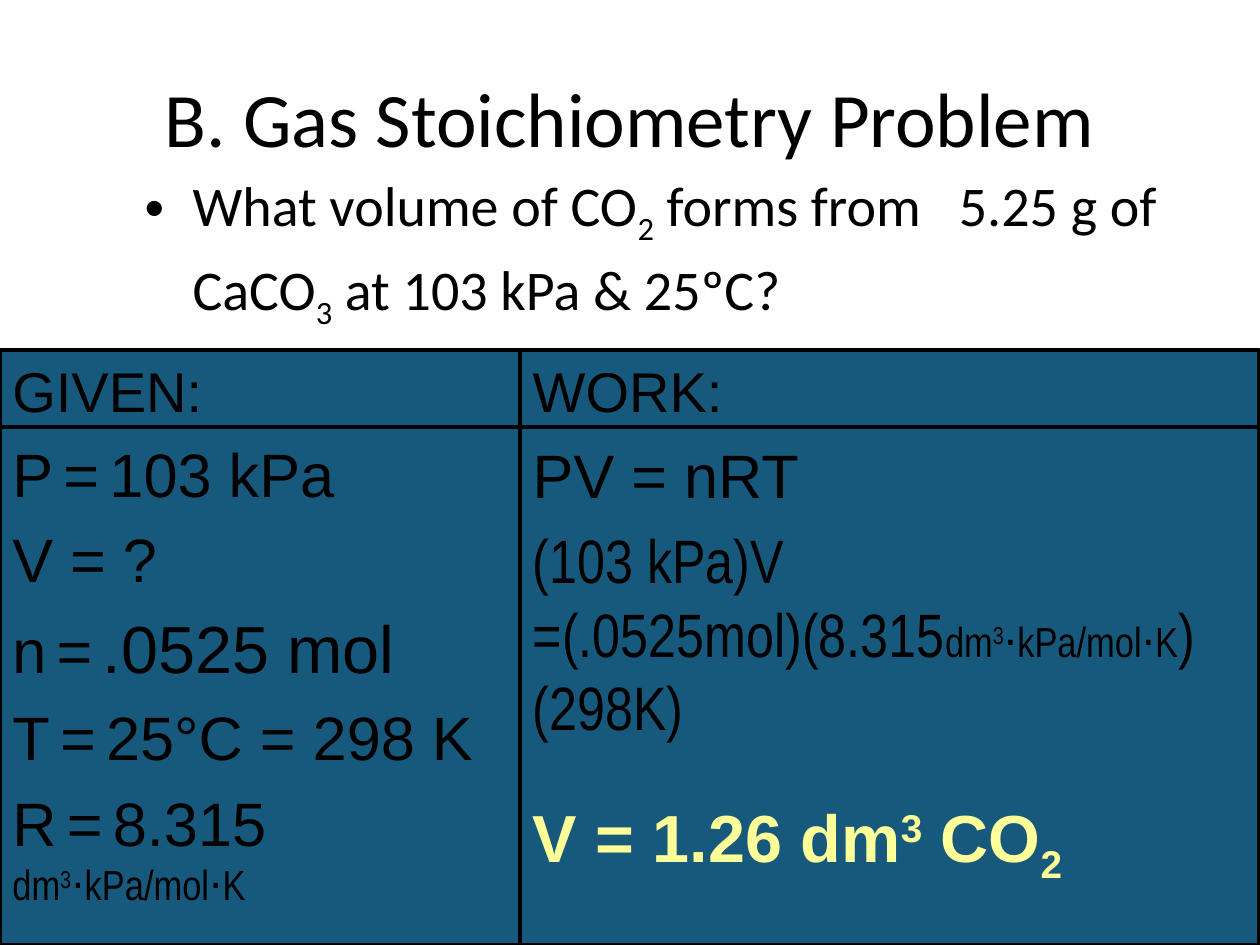
from lxml.etree import SubElement
from pptx import Presentation
from pptx.dml.color import RGBColor
from pptx.enum.shapes import MSO_CONNECTOR, MSO_SHAPE
from pptx.enum.text import MSO_ANCHOR, PP_ALIGN
from pptx.oxml.ns import qn
from pptx.util import Inches, Pt

W, H = 10, 7.5
TOP, SPLIT, HEADER_END = 2.78, 4.13, 3.39
BLACK, BLUE, YELLOW = "000000", "17597D", "FFFF99"
CALIBRI = dict(font="Calibri", size=32)
ARIAL = dict(font="Arial", size=35)
NARROW = dict(font="Arial Narrow", size=35)
UNIT = dict(font="Arial Narrow", size=24)
ANSWER = dict(font="Arial", size=38, bold=True, color=YELLOW)
SUB, SUP = dict(base=-25), dict(base=30)


def unit(lead=""):
    return [(lead + "dm", UNIT), ("3", UNIT | SUP), ("⋅kPa/mol⋅K", UNIT)]


def given(name, value, size=35):
    gap = (" ", ARIAL | dict(size=21))
    return [(name, ARIAL), gap, ("=", ARIAL), gap, (value, ARIAL | dict(size=size))]


# Each paragraph: space before in points, then its runs
TITLE = [(0, [("B. Gas Stoichiometry Problem", CALIBRI | dict(size=44))])]
QUESTION = [(0, [
    ("What volume of CO", CALIBRI), ("2", CALIBRI | SUB),
    (" forms from   5.25 g of CaCO", CALIBRI), ("3", CALIBRI | SUB),
    (" at 103 kPa & 25ºC?", CALIBRI)])]
GIVEN = [
    (3, [("GIVEN:", ARIAL | dict(size=32))]),
    (7, given("P", "103 kPa")),
    (7, [("V = ?", ARIAL)]),
    (7, given("n", ".0525 mol", 38)),
    (7, given("T", "25°C = 298 K")),
    (7, given("R", "8.315") + unit("\v")),
]
WORK = [
    (3, [("WORK:", ARIAL | dict(size=32))]),
    (7.5, [("PV = nRT", ARIAL)]),
    (7, [("(103 kPa)V\v=(.0525mol)(8.315", NARROW), *unit(), (") (298K)", NARROW)]),
    (30, [("V = 1.26 dm", ANSWER), ("3", ANSWER | SUP),
          (" CO", ANSWER), ("2", ANSWER | SUB)]),
]


def rgb(color):
    return RGBColor.from_string(color)


def add_run(p, text, font, size, color=BLACK, bold=False, base=0):
    for i, part in enumerate(text.split("\v")):
        if i:
            p.add_line_break()
        if not part:
            continue
        r = p.add_run()
        r.text = part
        f = r.font
        f.name, f.size, f.bold = font, Pt(size), bold
        f.color.rgb = rgb(color)
        if base:
            f._element.set("baseline", str(base * 1000))


def add_text(s, box, paragraphs, align=PP_ALIGN.LEFT, anchor=MSO_ANCHOR.TOP,
             spacing=1.0, bullet=False):
    tf = s.shapes.add_textbox(*map(Inches, box)).text_frame
    tf.word_wrap, tf.vertical_anchor = True, anchor
    for i, (before, runs) in enumerate(paragraphs):
        p = tf.add_paragraph() if i else tf.paragraphs[0]
        p.alignment, p.line_spacing, p.space_before = align, spacing, Pt(before)
        if bullet:
            pPr = p._p.get_or_add_pPr()
            pPr.set("marL", str(Inches(0.38)))
            pPr.set("indent", str(-Inches(0.38)))
            SubElement(pPr, qn("a:buFont"), typeface="Arial")
            SubElement(pPr, qn("a:buChar"), char="•")
        for text, style in runs:
            add_run(p, text, **style)


def set_line(line):
    line.color.rgb, line.width = rgb(BLACK), Pt(2.25)


def add_rule(s, *ends):
    rule = s.shapes.add_connector(MSO_CONNECTOR.STRAIGHT, *map(Inches, ends))
    set_line(rule.line)
    SubElement(rule._element.spPr, qn("a:effectLst"))


prs = Presentation()
prs.slide_width, prs.slide_height = Inches(W), Inches(H)
s = prs.slides.add_slide(prs.slide_layouts[6])

panel = s.shapes.add_shape(MSO_SHAPE.RECTANGLE,
                           *map(Inches, (0, TOP, W - 0.01, H - TOP)))
panel.shadow.inherit = False
panel.fill.solid()
panel.fill.fore_color.rgb = rgb(BLUE)
set_line(panel.line)

add_text(s, (SPLIT, TOP, W - SPLIT, 3.86), WORK)
add_text(s, (0.5, 0.3, W - 1, 1.25), TITLE, PP_ALIGN.CENTER, MSO_ANCHOR.MIDDLE)
add_text(s, (1.05, 1.24, W - 1.05, 1.56), QUESTION, spacing=1.1, bullet=True)
add_text(s, (0, TOP, SPLIT, 3.86), GIVEN)
add_rule(s, SPLIT, TOP, SPLIT, H)
add_rule(s, 0, HEADER_END, W, HEADER_END)

prs.save("out.pptx")
